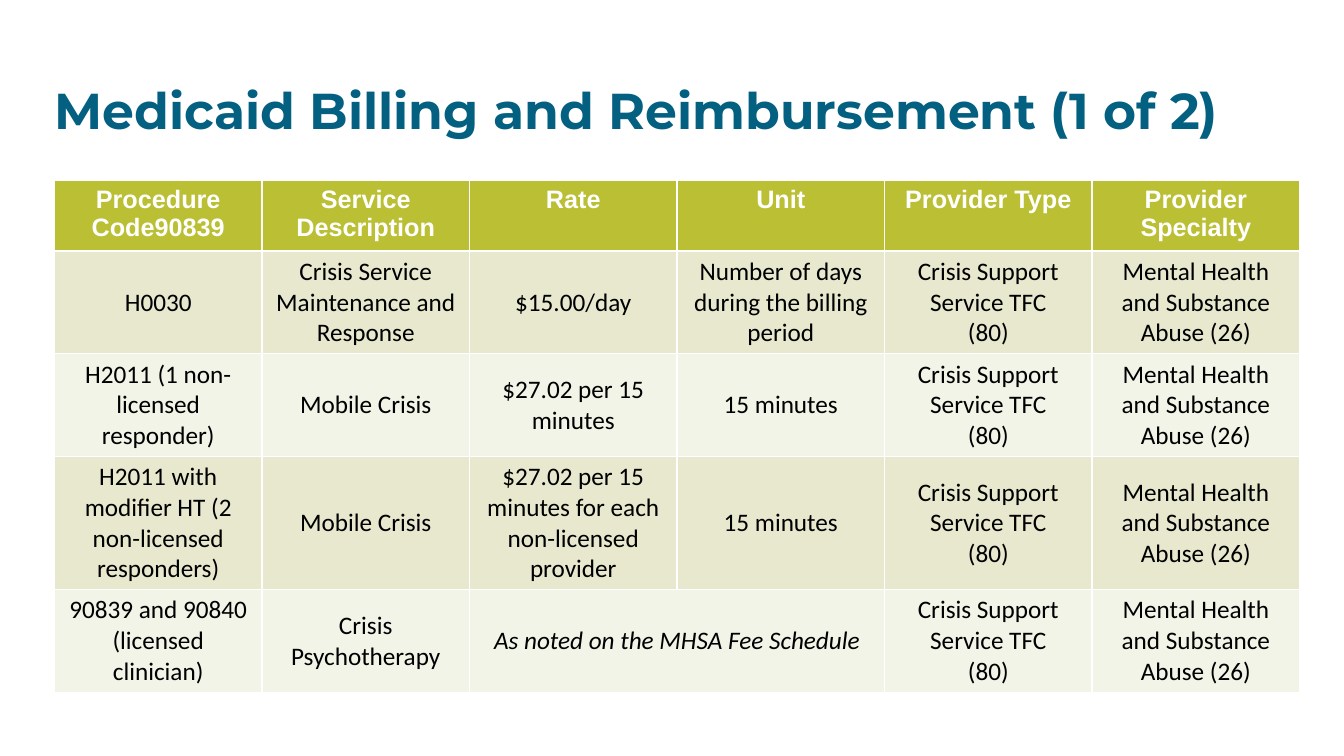
from pptx import Presentation
from pptx.dml.color import RGBColor
from pptx.enum.text import MSO_ANCHOR, PP_ALIGN
from pptx.util import Inches, Pt

BLUE = RGBColor(0x03, 0x60, 0x80)
GREEN = RGBColor(0xBA, 0xBF, 0x33)
BAND_DARK = RGBColor(0xE7, 0xE8, 0xCE)
BAND_LIGHT = RGBColor(0xF3, 0xF4, 0xE8)
WHITE = RGBColor(0xFF, 0xFF, 0xFF)
BLACK = RGBColor(0x00, 0x00, 0x00)

HEADER = ["Procedure Code90839", "Service Description", "Rate", "Unit",
          "Provider Type", "Provider Specialty"]
PROVIDER = ["Crisis Support Service TFC\n(80)",
            "Mental Health and Substance Abuse (26)"]
FEE_NOTE = "As noted on the MHSA Fee Schedule"
SERVICES = [
    ["H0030", "Crisis Service Maintenance and Response", "$15.00/day",
     "Number of days during the billing period"],
    ["H2011 (1 non-licensed responder)", "Mobile Crisis",
     "$27.02 per 15 minutes", "15 minutes"],
    ["H2011 with modifier HT (2 non-licensed responders)", "Mobile Crisis",
     "$27.02 per 15 minutes for each non-licensed provider", "15 minutes"],
    ["90839 and 90840 (licensed clinician)", "Crisis Psychotherapy",
     FEE_NOTE, ""],
]
ROWS = [HEADER] + [service + PROVIDER for service in SERVICES]
ROW_HEIGHTS = [0.65, 1.02, 1.02, 1.32, 1.02]
TABLE_WIDTH = 12.35


def write(tf, text, font="Calibri", size=18, color=BLACK, bold=False,
          italic=False, align=PP_ALIGN.CENTER, spacing=None):
    """Fill a text frame, one paragraph for each line of text."""
    tf.word_wrap = True
    for i, line in enumerate(text.split("\n")):
        p = tf.add_paragraph() if i else tf.paragraphs[0]
        p.alignment = align
        p.line_spacing = spacing
        r = p.add_run()
        r.text = line
        r.font.name = font
        r.font.size = Pt(size)
        r.font.bold = bold
        r.font.italic = italic
        r.font.color.rgb = color


prs = Presentation()
prs.slide_width, prs.slide_height = Inches(13.33), Inches(7.5)
s = prs.slides.add_slide(prs.slide_layouts[6])

title = s.shapes.add_textbox(Inches(0.44), Inches(0.4), Inches(12.46), Inches(1.45))
title.text_frame.vertical_anchor = MSO_ANCHOR.MIDDLE
write(title.text_frame, "Medicaid Billing and Reimbursement (1 of 2)",
      font="Montserrat", size=36, color=BLUE, bold=True,
      align=PP_ALIGN.LEFT, spacing=0.9)

table = s.shapes.add_table(len(ROWS), len(HEADER), Inches(0.54), Inches(1.79),
                           Inches(TABLE_WIDTH), Inches(sum(ROW_HEIGHTS))).table
for column in table.columns:
    column.width = Inches(TABLE_WIDTH / len(HEADER))
for row, height in zip(table.rows, ROW_HEIGHTS):
    row.height = Inches(height)
table.cell(4, 2).merge(table.cell(4, 3))

for i, texts in enumerate(ROWS):
    for j, text in enumerate(texts):
        cell = table.cell(i, j)
        cell.fill.solid()
        if i == 0:
            cell.fill.fore_color.rgb = GREEN
            write(cell.text_frame, text, font="Arial", color=WHITE, bold=True)
            continue
        cell.fill.fore_color.rgb = BAND_DARK if i % 2 else BAND_LIGHT
        cell.vertical_anchor = MSO_ANCHOR.MIDDLE
        if text:
            write(cell.text_frame, text, italic=text == FEE_NOTE)

prs.save("out.pptx")
